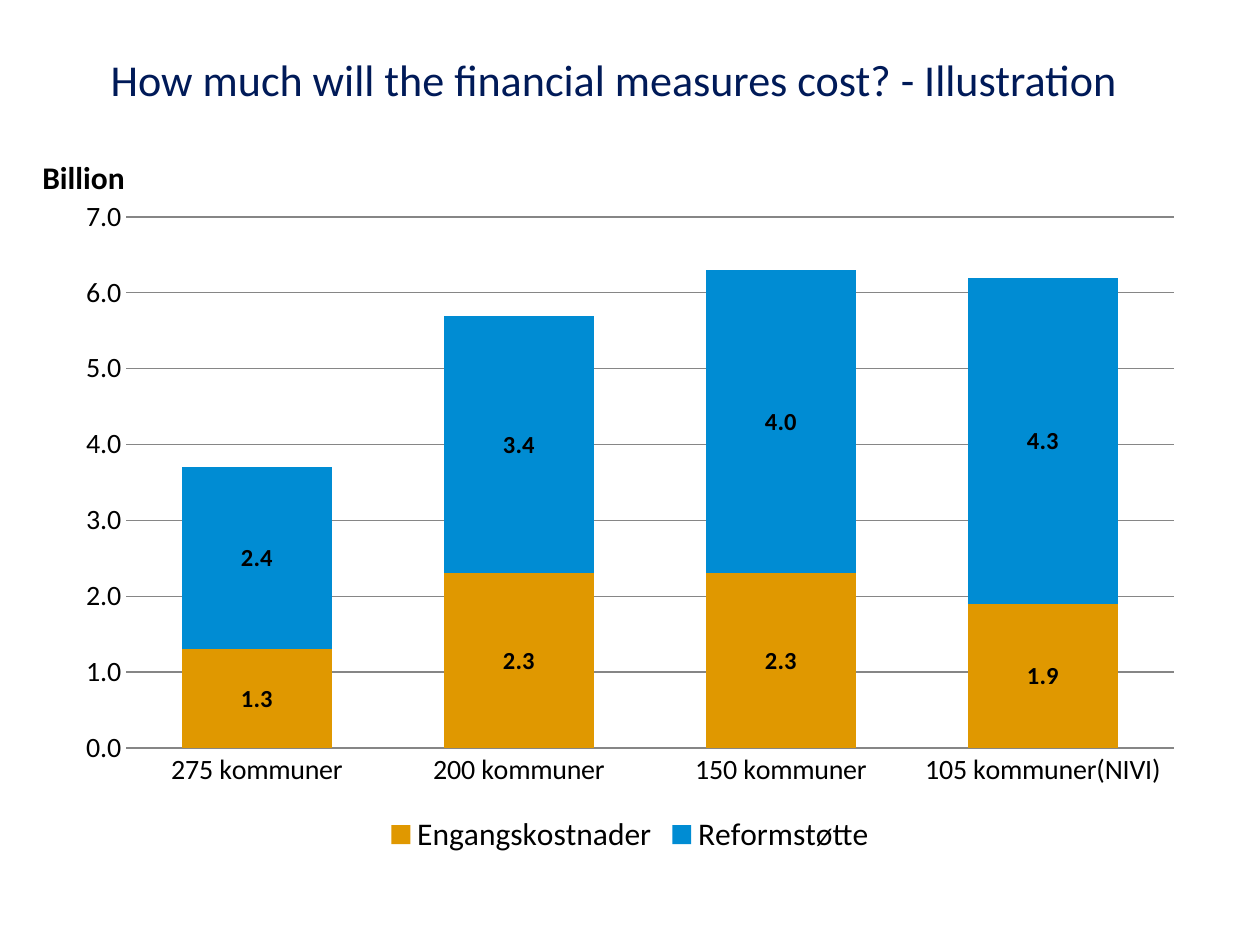
from lxml import etree
from pptx import Presentation
from pptx import util as u
from pptx.chart.data import CategoryChartData
from pptx.dml.color import RGBColor
from pptx.enum import chart as charts, text
from pptx.oxml.ns import qn

SCALE = 914400 / 126  # EMU in one px
FONT = "Calibri"
BLACK, NAVY, GRID = "000000", "001A58", "868686"
CATEGORIES = ["275 kommuner", "200 kommuner", "150 kommuner", "105 kommuner(NIVI)"]
SERIES = [
    ("Engangskostnader", [1.3, 2.3, 2.3, 1.9], "E09800"),
    ("Reformstøtte", [2.4, 3.4, 4.0, 4.3], "008CD3"),
]


def px(length):
    return u.Emu(round(length * SCALE))


def colour(value):
    return RGBColor.from_string(value)


def apply(target, values):
    for name, value in values.items():
        setattr(target, name, value)


def style_font(font, size, shade=BLACK, bold=False):
    apply(font, {"name": FONT, "size": u.Pt(size), "bold": bold})
    font.color.rgb = colour(shade)


def style_line(line):
    line.color.rgb = colour(GRID)
    line.width = u.Pt(0.75)


def add_label(page, area, words, size, shade, bold, align, inset):
    box = page.shapes.add_textbox(*map(px, area))
    frame = box.text_frame
    apply(frame, {"word_wrap": True, "vertical_anchor": text.MSO_ANCHOR.TOP,
                  "margin_top": px(inset), "margin_bottom": px(inset)})
    para = frame.paragraphs[0]
    para.alignment = align
    span = para.add_run()
    span.text = words
    style_font(span.font, size, shade, bold)


def place_plot(chart, area, plot):
    """Fix the inner plot area, given in px, within the chart's box."""
    left, top, width, height = area
    shares = {"x": (plot[0] - left) / width, "y": (plot[1] - top) / height,
              "w": plot[2] / width, "h": plot[3] / height}
    plot_area = chart.plots[0]._element.getparent()
    layout = plot_area.find(qn("c:layout"))
    if layout is None:
        layout = etree.Element(qn("c:layout"))
        plot_area.insert(0, layout)
    manual = etree.SubElement(layout, qn("c:manualLayout"))
    settings = {"layoutTarget": "inner", "xMode": "edge", "yMode": "edge"}
    for name, value in {**settings, **shares}.items():
        etree.SubElement(manual, qn(f"c:{name}")).set("val", str(value))


def add_cost_chart(page, area, plot_box):
    data = CategoryChartData(number_format="0.0")
    data.categories = CATEGORIES
    for name, values, _ in SERIES:
        data.add_series(name, values)
    chart = page.shapes.add_chart(
        charts.XL_CHART_TYPE.COLUMN_STACKED, *map(px, area), data).chart
    style_font(chart.font, 14)
    apply(chart, {"has_title": False, "has_legend": True})
    apply(chart.legend, {"position": charts.XL_LEGEND_POSITION.BOTTOM,
                         "include_in_layout": False})
    style_font(chart.legend.font, 18)

    # Axes
    for axis in (chart.category_axis, chart.value_axis):
        apply(axis, {"major_tick_mark": charts.XL_TICK_MARK.NONE,
                     "minor_tick_mark": charts.XL_TICK_MARK.NONE})
        style_font(axis.tick_labels.font, 16)
    style_line(chart.category_axis.format.line)
    values_axis = chart.value_axis
    apply(values_axis, {"minimum_scale": 0, "maximum_scale": 7, "major_unit": 1,
                        "has_major_gridlines": True})
    apply(values_axis.tick_labels, {"number_format": "0.0",
                                    "number_format_is_linked": False})
    values_axis.format.line.fill.background()
    style_line(values_axis.major_gridlines.format.line)

    # Columns and their labels
    plot = chart.plots[0]
    apply(plot, {"gap_width": 75, "overlap": 100, "vary_by_categories": False})
    for series, (_, _, shade) in zip(plot.series, SERIES):
        series.format.fill.solid()
        series.format.fill.fore_color.rgb = colour(shade)
        labels = series.data_labels
        apply(labels, {"show_value": True, "number_format": "0.0",
                       "number_format_is_linked": False,
                       "position": charts.XL_LABEL_POSITION.CENTER})
        style_font(labels.font, 14, bold=True)
    place_plot(chart, area, plot_box)


def main():
    deck = Presentation()
    apply(deck, {"slide_width": px(1260), "slide_height": px(945)})
    page = deck.slides.add_slide(deck.slide_layouts[6])
    add_label(page, (47, 52, 1134, 82),
              "How much will the financial measures cost? - Illustration",
              25.2, NAVY, False, text.PP_ALIGN.CENTER, 0)
    add_cost_chart(page, (63, 186, 1134, 674), (126, 217, 1048, 531))
    add_label(page, (30, 152, 152, 50), "Billion",
              18, BLACK, True, text.PP_ALIGN.LEFT, 6)
    deck.save("out.pptx")


if __name__ == "__main__":
    main()
